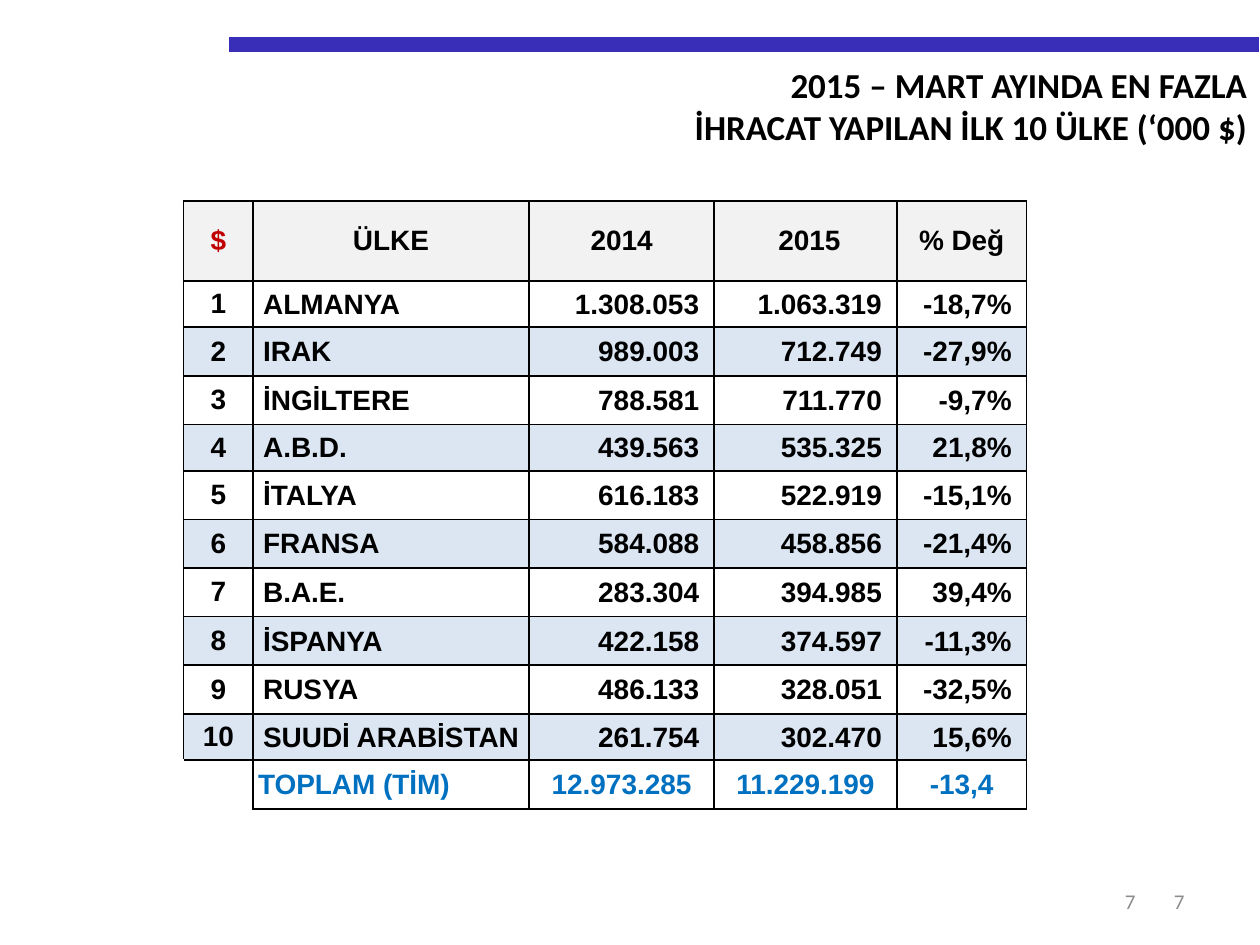
import pptx
import pptx.dml.color
import pptx.enum.shapes
import pptx.enum.text
import pptx.oxml
import pptx.oxml.ns
import pptx.util

Pt = pptx.util.Pt
PP_ALIGN = pptx.enum.text.PP_ALIGN
ANCHOR = pptx.enum.text.MSO_ANCHOR
LEFT, CENTER, RIGHT = PP_ALIGN.LEFT, PP_ALIGN.CENTER, PP_ALIGN.RIGHT

TITLE = ["2015 – MART AYINDA EN FAZLA", "İHRACAT YAPILAN İLK 10 ÜLKE (‘000 $)"]
HEADER = ["$", "ÜLKE", "2014", " 2015", "% Değ"]
COUNTRIES = [
    ["ALMANYA", "1.308.053", "1.063.319", "-18,7%"],
    ["IRAK", "989.003", "712.749", "-27,9%"],
    ["İNGİLTERE", "788.581", "711.770", "-9,7%"],
    ["A.B.D.", "439.563", "535.325", "21,8%"],
    ["İTALYA", "616.183", "522.919", "-15,1%"],
    ["FRANSA", "584.088", "458.856", "-21,4%"],
    ["B.A.E.", "283.304", "394.985", "39,4%"],
    ["İSPANYA", "422.158", "374.597", "-11,3%"],
    ["RUSYA", "486.133", "328.051", "-32,5%"],
    ["SUUDİ ARABİSTAN", "261.754", "302.470", "15,6%"],
]
TOTAL = ["", "TOPLAM (TİM)", "12.973.285", "11.229.199", "-13,4"]
COL_WIDTHS = [39.6, 157.7, 105.8, 104.4, 74.2]
HEADER_HEIGHT, ROW_HEIGHT, LOW_ROW_HEIGHT = 45.7, 27.8, 26.5
LOW_ROWS = (1, 4, 10)

# Cell margins: left, top, right, bottom
WIDE = (7.2, 3.6, 7.2, 3.6)
NAME = (5.8, 0.7, 0.7, 0)
NUMBER = (0.7, 0.7, 8.6, 0)
TOTAL_NAME = (2.9, 0.7, 0.7, 0)
TIGHT = (0.7, 0.7, 0.7, 0)


def rgb(value):
    return pptx.dml.color.RGBColor.from_string(value)


class Deck:
    black, red, blue = "000000", "C00000", "0070C0"
    bar, grey, head, band = "382EB8", "8C8C8C", "F2F2F2", "DCE6F2"
    body_font, table_font = "Calibri", "Arial"

    def __init__(self, prs):
        self.s = prs.slides.add_slide(prs.slide_layouts[5])

    def run(self, p, text, size, font, color, bold, align):
        p.alignment = align
        r = p.add_run()
        r.text = text
        r.font.size, r.font.name, r.font.bold = Pt(size), font, bold
        r.font.color.rgb = rgb(color)

    def title(self, lines, x, y, w, h):
        sp = self.s.shapes.title
        sp.left, sp.top, sp.width, sp.height = Pt(x), Pt(y), Pt(w), Pt(h)
        tf = sp.text_frame
        tf.vertical_anchor = ANCHOR.TOP
        tf.auto_size = pptx.enum.text.MSO_AUTO_SIZE.SHAPE_TO_FIT_TEXT
        for i, line in enumerate(lines):
            p = tf.add_paragraph() if i else tf.paragraphs[0]
            self.run(p, line, 20, self.body_font, self.black, True, RIGHT)

    def page_number(self, text, x, y, w, h):
        tf = self.s.shapes.add_textbox(Pt(x), Pt(y), Pt(w), Pt(h)).text_frame
        tf.word_wrap = True
        tf.vertical_anchor = ANCHOR.MIDDLE
        self.run(tf.paragraphs[0], text, 12, self.body_font, self.grey, False, RIGHT)

    def rule(self, x1, x2, y, width):
        line = self.s.shapes.add_connector(
            pptx.enum.shapes.MSO_CONNECTOR.STRAIGHT, Pt(x1), Pt(y), Pt(x2), Pt(y))
        line.line.color.rgb = rgb(self.bar)
        line.line.width = Pt(width)
        line._element.spPr.append(pptx.oxml.parse_xml(
            f'<a:effectLst {pptx.oxml.ns.nsdecls("a")}/>'))

    def table(self, x, y, widths, heights):
        tbl = self.s.shapes.add_table(len(heights), len(widths), Pt(x), Pt(y),
                                      Pt(sum(widths)), Pt(sum(heights))).table
        tbl.first_row = tbl.horz_banding = False
        for col, w in zip(tbl.columns, widths):
            col.width = Pt(w)
        for row, h in zip(tbl.rows, heights):
            row.height = Pt(h)
        return tbl

    def cell(self, cell, text, align, margins, color=black, fill=None, sides="LRTB"):
        (cell.margin_left, cell.margin_top,
         cell.margin_right, cell.margin_bottom) = map(Pt, margins)
        cell.vertical_anchor = ANCHOR.MIDDLE
        if fill:
            cell.fill.solid()
            cell.fill.fore_color.rgb = rgb(fill)
        else:
            cell.fill.background()
        self.borders(cell, sides)
        if text:
            self.run(cell.text_frame.paragraphs[0], text, 16, self.table_font,
                     color, True, align)

    def borders(self, cell, sides):
        tcPr = cell._tc.get_or_add_tcPr()
        for i, side in enumerate(sides):
            tcPr.insert(i, pptx.oxml.parse_xml(
                f'<a:ln{side} {pptx.oxml.ns.nsdecls("a")} w="{Pt(1)}"><a:solidFill>'
                f'<a:srgbClr val="{self.black}"/></a:solidFill></a:ln{side}>'))


def fill_table(deck, tbl):
    for c, text in enumerate(HEADER):
        color = deck.black if c else deck.red
        deck.cell(tbl.cell(0, c), text, CENTER, WIDE, color, deck.head)
    aligns = [CENTER, LEFT, RIGHT, RIGHT, RIGHT]
    margins = [WIDE, NAME, NUMBER, NUMBER, NUMBER]
    for rank, country in enumerate(COUNTRIES, 1):
        fill = None if rank % 2 else deck.band
        for c, text in enumerate([str(rank)] + country):
            deck.cell(tbl.cell(rank, c), text, aligns[c], margins[c], fill=fill)
    last = len(COUNTRIES) + 1
    for c, text in enumerate(TOTAL):
        deck.cell(tbl.cell(last, c), text, LEFT if c < 2 else CENTER,
                  TOTAL_NAME if c == 1 else TIGHT, deck.blue,
                  sides="LRTB" if c else "RT")


def main():
    prs = pptx.Presentation()
    prs.slide_width, prs.slide_height = Pt(720), Pt(540)
    deck = Deck(prs)
    deck.page_number("7", 516.2, 500.4, 167.8, 28.8)
    deck.rule(131, 719.3, 25.2, 8.5)
    deck.page_number("7", 504.7, 500.4, 151.2, 28.8)
    deck.title(TITLE, 76.3, 32.4, 643.7, 55.4)
    heights = [HEADER_HEIGHT] + [
        LOW_ROW_HEIGHT if row in LOW_ROWS else ROW_HEIGHT
        for row in range(1, len(COUNTRIES) + 2)]
    fill_table(deck, deck.table(105, 114.8, COL_WIDTHS, heights))
    prs.save("out.pptx")


if __name__ == "__main__":
    main()
